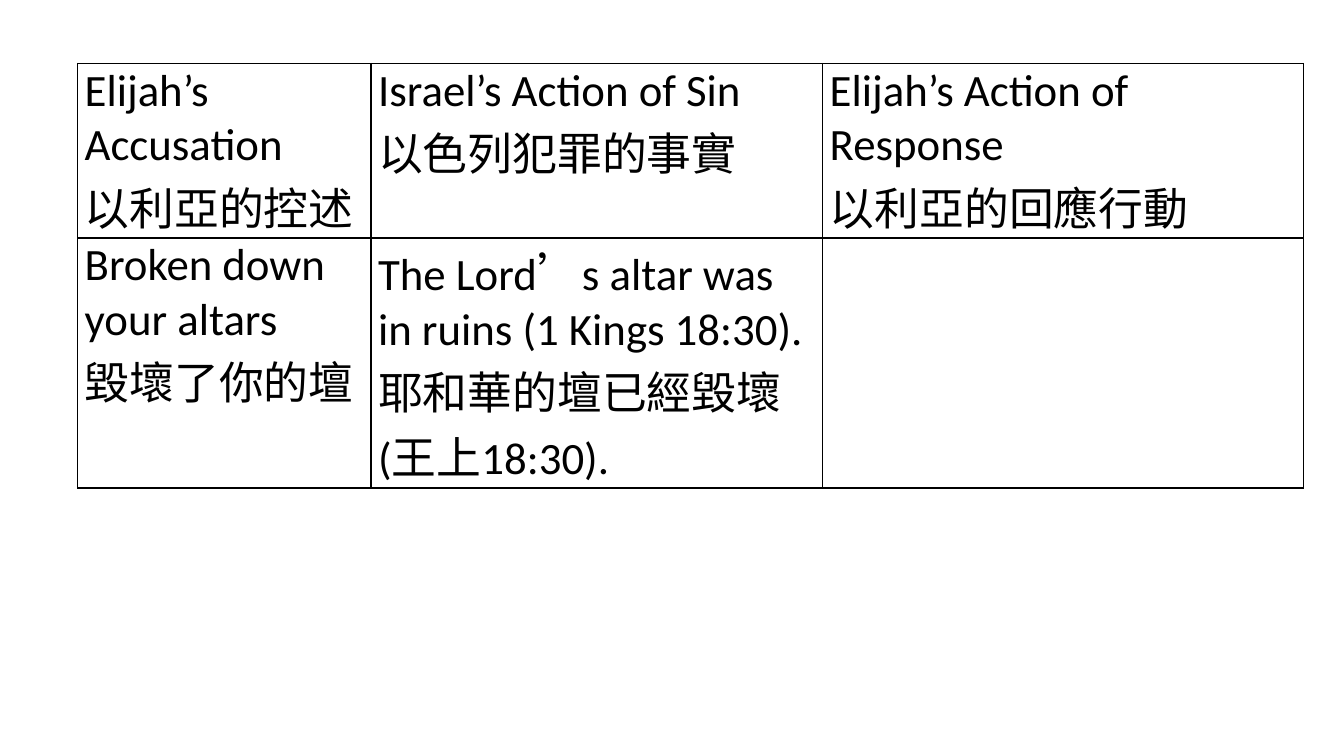
import pptx
import pptx.dml.color
import pptx.oxml
import pptx.oxml.ns
import pptx.util
from pptx.util import Inches

INK = "000000"
COLUMN_WIDTHS = [2.91, 4.48, 4.77]
ROW_HEIGHTS = [1.73, 2.48]
ACCUSATION_ROWS = [
    [
        ["Elijah’s Accusation", "以利亞的控述"],
        ["Israel’s Action of Sin", "以色列犯罪的事實"],
        ["Elijah’s Action of Response", "以利亞的回應行動"],
    ],
    [
        ["Broken down your altars", "毀壞了你的壇"],
        ["The Lord’s altar was in ruins (1 Kings 18:30). 耶和華的壇已經毀壞(王上18:30)."],
        [],
    ],
]


def write_text(paragraph, text, *, size=32, font="Calibri", color=INK):
    run = paragraph.add_run()
    run.text = text
    run.font.size = pptx.util.Pt(size)
    run.font.name = font
    run.font.bold = False
    run.font.color.rgb = pptx.dml.color.RGBColor.from_string(color)


def add_borders(cell, color=INK, width=1):
    """Draw all four cell edges; call before setting the fill, which must follow them."""
    properties = cell._tc.get_or_add_tcPr()
    for edge in ("lnL", "lnR", "lnT", "lnB"):
        properties.append(pptx.oxml.parse_xml(
            f'<a:{edge} {pptx.oxml.ns.nsdecls("a")} w="{pptx.util.Pt(width)}">'
            f'<a:solidFill><a:srgbClr val="{color}"/></a:solidFill></a:{edge}>'
        ))


presentation = pptx.Presentation()
presentation.slide_width = Inches(13.33)
presentation.slide_height = Inches(7.5)
slide = presentation.slides.add_slide(presentation.slide_layouts[6])

accusations = slide.shapes.add_table(
    len(ROW_HEIGHTS), len(COLUMN_WIDTHS), Inches(0.77), Inches(0.63),
    Inches(sum(COLUMN_WIDTHS)), Inches(sum(ROW_HEIGHTS)),
).table
accusations.first_row = False
accusations.horz_banding = False
for column, width in zip(accusations.columns, COLUMN_WIDTHS):
    column.width = Inches(width)

for row, height, row_texts in zip(accusations.rows, ROW_HEIGHTS, ACCUSATION_ROWS):
    row.height = Inches(height)
    for cell, lines in zip(row.cells, row_texts):
        cell.margin_left = cell.margin_right = Inches(0.07)
        cell.margin_top = cell.margin_bottom = 0
        add_borders(cell)
        cell.fill.background()
        for index, line in enumerate(lines):
            paragraph = cell.text_frame.add_paragraph() if index else cell.text_frame.paragraphs[0]
            write_text(paragraph, line)

presentation.save("out.pptx")
